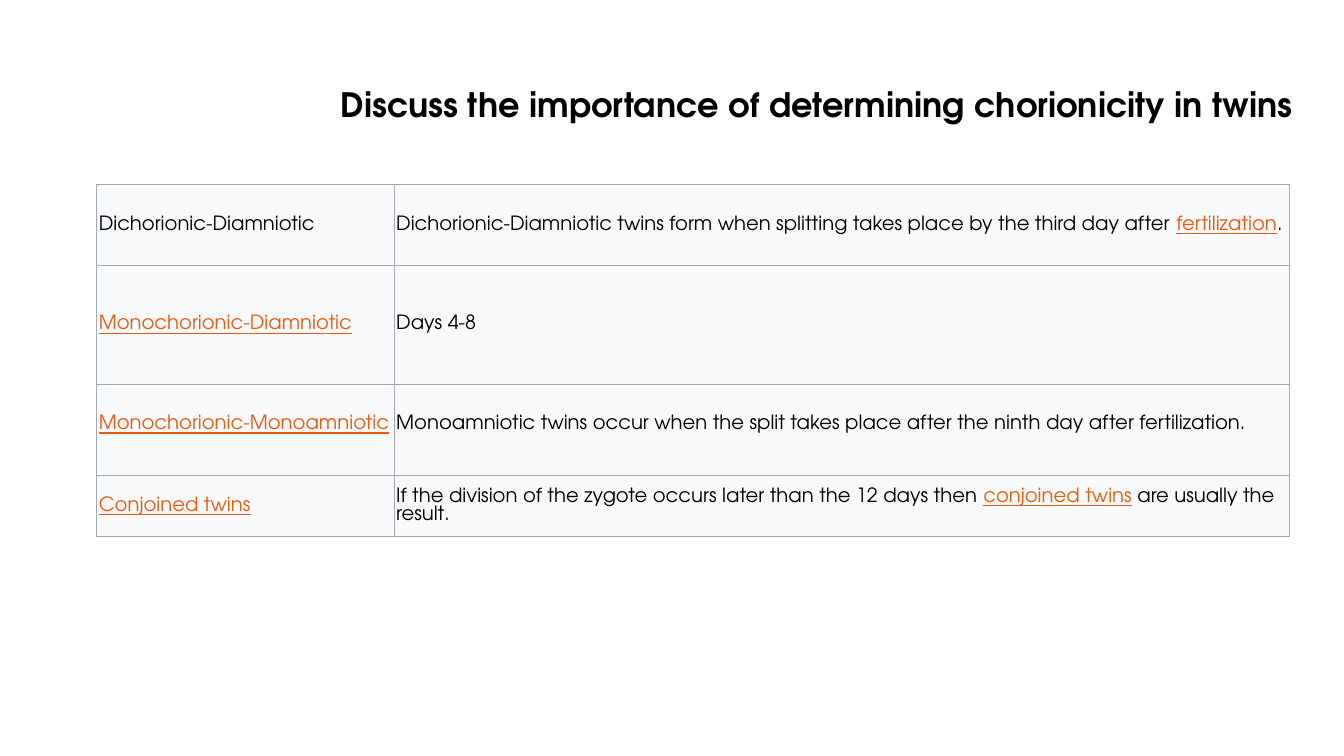
"""Build the slide on chorionicity in twins."""
from dataclasses import dataclass

from lxml import etree
from pptx import Presentation
from pptx import util as u
from pptx.dml.color import RGBColor
from pptx.enum import text
from pptx.oxml.ns import qn


@dataclass(frozen=True)
class Theme:
    font: str = "TeX Gyre Adventor"
    ink: str = "000000"
    link: str = "EA5A0C"
    cell: str = "F8F9FA"
    border: str = "A2A9B1"
    title_size: int = 24
    body_size: int = 14
    border_width: float = 0.75


THEME = Theme()
WIDTH, HEIGHT = 13.33, 7.5
LEFT = 0.96
COLUMNS = (2.95, 8.88)
PADDING = (0.02, 0.01)

EARLY_SPLIT = [
    (["Dichorionic-Diamniotic"],
     ["Dichorionic-Diamniotic twins form when splitting takes place by the third day after ",
      ("fertilization",), "."]),
    ([("Monochorionic-Diamniotic",)], ["Days 4-8"]),
]
LATE_SPLIT = [
    ([("Monochorionic-Monoamniotic",)],
     ["Monoamniotic twins occur when the split takes place after the ninth day after fertilization."]),
    ([("Conjoined twins",)],
     ["If the division of the zygote occurs later than the 12 days then ",
      ("conjoined twins",), " are usually the result."]),
]


def add_run(p, content, size=THEME.body_size, color=THEME.ink, bold=False, underline=False):
    """Append a formatted run to a paragraph."""
    r = p.add_run()
    r.text = content
    r.font.name = THEME.font
    r.font.size = u.Pt(size)
    r.font.bold = bold
    r.font.underline = underline
    r.font.color.rgb = RGBColor.from_string(color)


def set_borders(cell):
    """Draw the same thin line on all four sides of a cell."""
    tc_pr = cell._tc.get_or_add_tcPr()
    for i, side in enumerate(("lnL", "lnR", "lnT", "lnB")):
        ln = etree.Element(qn(f"a:{side}"), w=str(u.Pt(THEME.border_width)))
        fill = etree.SubElement(ln, qn("a:solidFill"))
        etree.SubElement(fill, qn("a:srgbClr"), val=THEME.border)
        tc_pr.insert(i, ln)


def fill_cell(cell, parts):
    """Write plain strings and link-styled tuples into a cell."""
    cell.margin_left = cell.margin_right = u.Inches(PADDING[0])
    cell.margin_top = cell.margin_bottom = u.Inches(PADDING[1])
    cell.vertical_anchor = text.MSO_ANCHOR.MIDDLE
    cell.fill.solid()
    cell.fill.fore_color.rgb = RGBColor.from_string(THEME.cell)
    set_borders(cell)
    p = cell.text_frame.paragraphs[0]
    for part in parts:
        if isinstance(part, tuple):
            add_run(p, part[0], color=THEME.link, underline=True)
        else:
            add_run(p, part)


def add_twin_table(s, rows, top, heights):
    """Add a two-column table of twin types and their timing."""
    frame = s.shapes.add_table(len(rows), len(COLUMNS), u.Inches(LEFT), u.Inches(top),
                               u.Inches(sum(COLUMNS)), u.Inches(sum(heights)))
    table = frame.table
    table.first_row = table.horz_banding = False
    for column, width in zip(table.columns, COLUMNS):
        column.width = u.Inches(width)
    for row, height, contents in zip(table.rows, heights, rows):
        row.height = u.Inches(height)
        for cell, parts in zip(row.cells, contents):
            fill_cell(cell, parts)


def set_title(s, content):
    """Place and format the title placeholder."""
    sp = s.shapes.title
    sp.left, sp.top, sp.width, sp.height = map(u.Inches, (3.28, 0.78, 9.85, 0.5))
    tf = sp.text_frame
    tf.word_wrap = True
    tf.auto_size = text.MSO_AUTO_SIZE.NONE
    tf.vertical_anchor = text.MSO_ANCHOR.TOP
    p = tf.paragraphs[0]
    p.alignment = text.PP_ALIGN.LEFT
    add_run(p, content, size=THEME.title_size, bold=True)


def main():
    """Create and save the presentation."""
    prs = Presentation()
    prs.slide_width, prs.slide_height = u.Inches(WIDTH), u.Inches(HEIGHT)
    s = prs.slides.add_slide(prs.slide_layouts[5])
    add_twin_table(s, LATE_SPLIT, top=3.7, heights=(1.02, 0.6))
    add_twin_table(s, EARLY_SPLIT, top=1.83, heights=(0.8, 1.18))
    set_title(s, "Discuss the importance of determining chorionicity in twins")
    prs.save("out.pptx")


if __name__ == "__main__":
    main()
